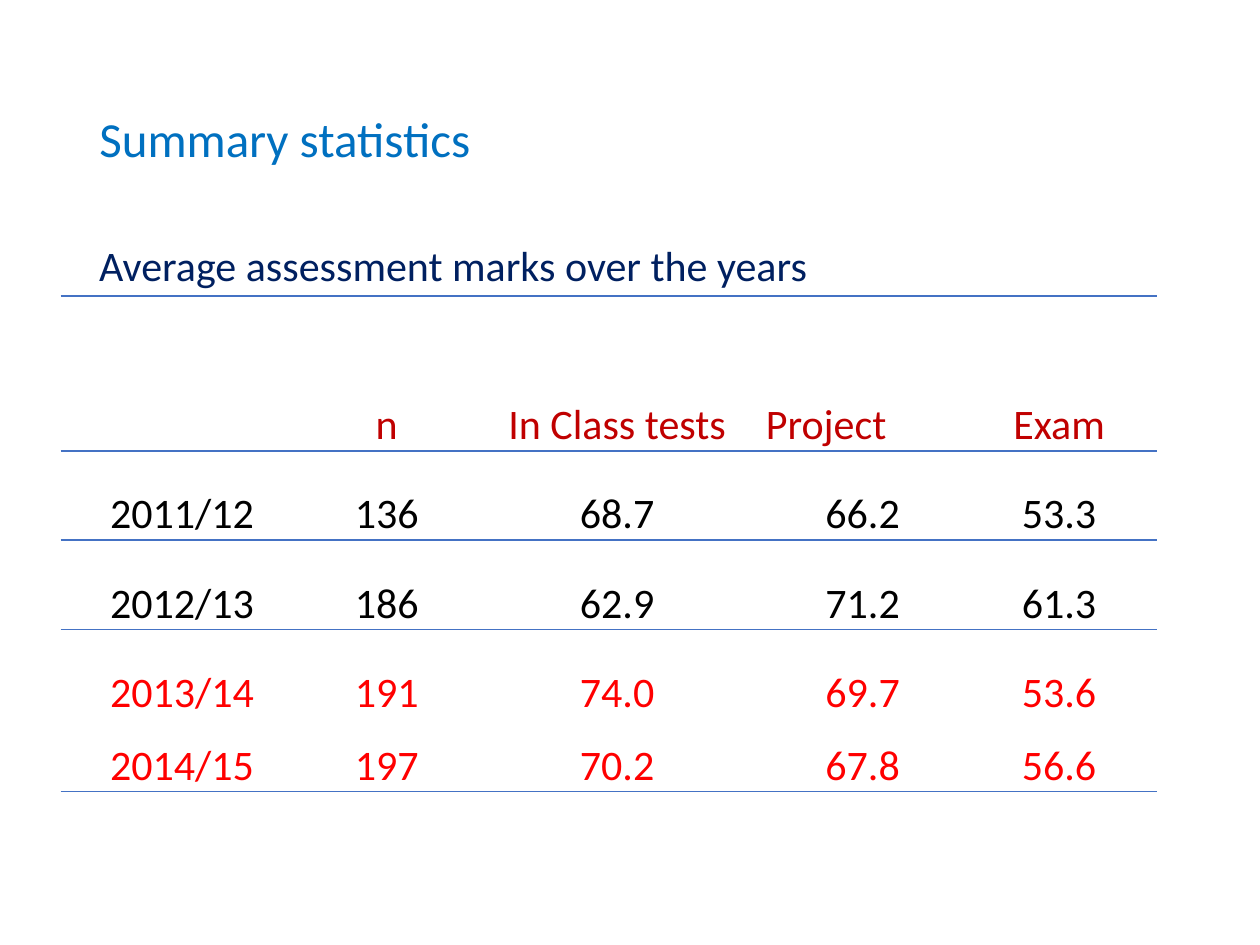
from lxml.etree import SubElement
from pptx import Presentation
from pptx.dml.color import RGBColor
from pptx.enum.text import MSO_ANCHOR, MSO_AUTO_SIZE, PP_ALIGN
from pptx.oxml import parse_xml
from pptx.oxml.ns import nsdecls, qn
from pptx.util import Cm, Pt

TITLE_BLUE = RGBColor(0x00, 0x70, 0xC0)
NAVY = RGBColor(0x00, 0x20, 0x60)
DARK_RED = RGBColor(0xC0, 0x00, 0x00)
BLACK = RGBColor(0x00, 0x00, 0x00)
RED = RGBColor(0xFF, 0x00, 0x00)
RULE_BLUE = RGBColor(0x44, 0x72, 0xC4)
NO_STYLE = "{2D5ABB26-0587-4C30-8999-92F81FD0307C}"


def write(tf, text, size, color, **fmt):
    p = tf.paragraphs[0]
    for name, value in fmt.items():
        setattr(p, name, value)
    r = p.add_run()
    r.text = text
    r.font.name, r.font.size, r.font.bold = "Calibri", Pt(size), False
    r.font.color.rgb = color


def add_border(cell, side):
    ln = parse_xml(f'<a:{side} {nsdecls("a")} w="{Pt(1)}"/>')
    fill = SubElement(ln, qn("a:solidFill"))
    SubElement(fill, qn("a:srgbClr"), val=str(RULE_BLUE))
    cell._tc.get_or_add_tcPr().insert(0, ln)


prs = Presentation()
prs.slide_width, prs.slide_height = Cm(25.4), Cm(19.05)
s = prs.slides.add_slide(prs.slide_layouts[5])

# Title
title = s.shapes.title
title.left, title.top, title.width, title.height = Cm(1.75), Cm(1.02), Cm(21.9), Cm(3.68)
title.text_frame.vertical_anchor = MSO_ANCHOR.MIDDLE
write(title.text_frame, "Summary statistics", 28, TITLE_BLUE,
      alignment=PP_ALIGN.LEFT, line_spacing=0.9)

# Table of marks
rows = [
    (3.12, DARK_RED, ["", "n", "In Class tests", "Project", "Exam"]),
    (1.8, BLACK, ["2011/12", "136", "68.7", "66.2", "53.3"]),
    (1.8, BLACK, ["2012/13", "186", "62.9", "71.2", "61.3"]),
    (1.8, RED, ["2013/14", "191", "74.0", "69.7", "53.6"]),
    (1.47, RED, ["2014/15", "197", "70.2", "67.8", "56.6"]),
]
widths = [4.9, 3.35, 5.94, 3.96, 3.96]
# Sides in reverse schema order, as each is put first
borders = {0: ["lnB", "lnT"], 1: ["lnB", "lnT"], 2: ["lnT"], 4: ["lnB"]}
cell_format = {
    "vertical_anchor": MSO_ANCHOR.BOTTOM,
    "margin_left": Cm(0.03), "margin_right": Cm(0.03),
    "margin_top": Cm(0.03), "margin_bottom": 0,
}

table = s.shapes.add_table(len(rows), len(widths), Cm(1.22), Cm(5.97),
                           Cm(sum(widths)), Cm(9.99)).table
table.first_row = table.horz_banding = False
table._tbl.tblPr.find(qn("a:tableStyleId")).text = NO_STYLE
for column, width in zip(table.columns, widths):
    column.width = Cm(width)
for i, (height, color, texts) in enumerate(rows):
    table.rows[i].height = Cm(height)
    for j, text in enumerate(texts):
        cell = table.cell(i, j)
        cell.fill.background()
        for name, value in cell_format.items():
            setattr(cell, name, value)
        for side in borders.get(i, []):
            add_border(cell, side)
        if text:
            align = PP_ALIGN.LEFT if text == "Project" else PP_ALIGN.CENTER
            write(cell.text_frame, text, 24, color, alignment=align, space_after=Pt(6))

# Subtitle above the table
tf = s.shapes.add_textbox(Cm(1.75), Cm(4.7), Cm(22.12), Cm(1.27)).text_frame
tf.word_wrap = True
tf.auto_size = MSO_AUTO_SIZE.SHAPE_TO_FIT_TEXT
write(tf, "Average assessment marks over the years", 24, NAVY)

prs.save("out.pptx")
